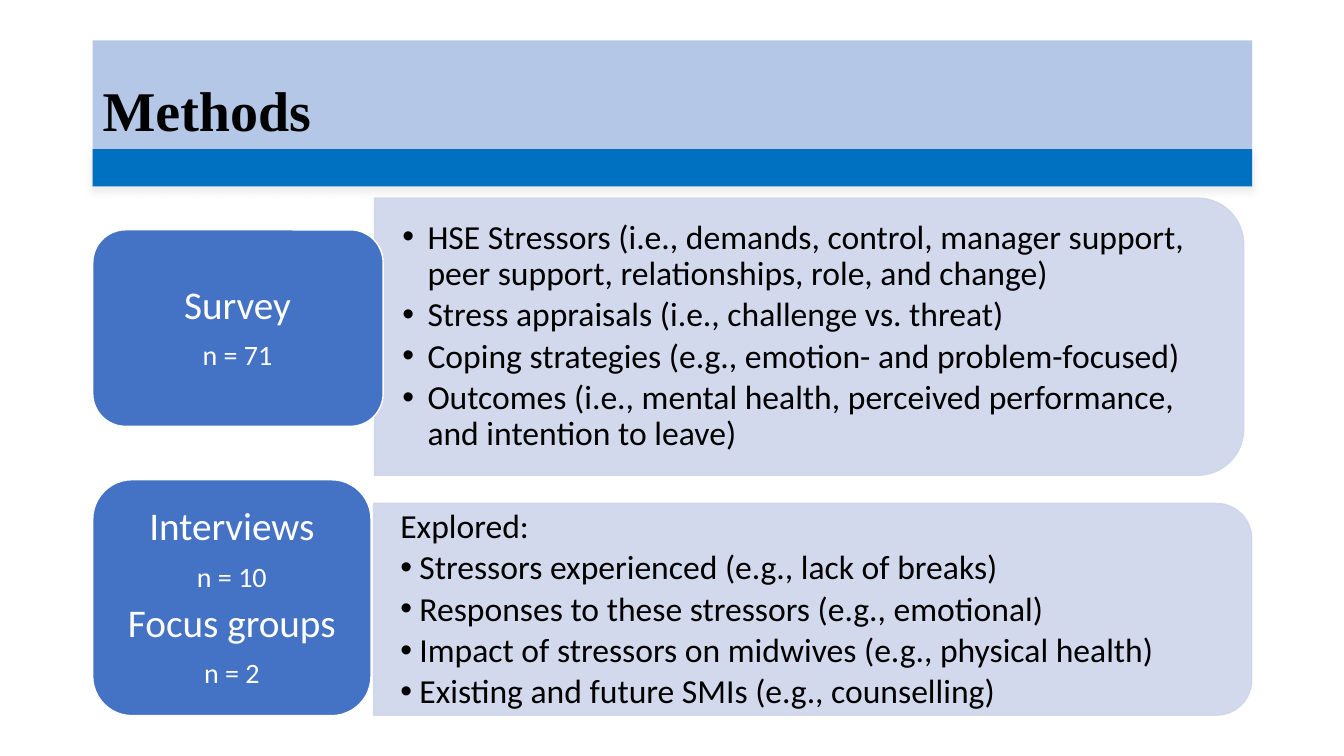
import pptx
import pptx.dml.color
import pptx.enum.shapes
import pptx.enum.text
import pptx.oxml
import pptx.oxml.ns
import pptx.util
from lxml import etree

Inches, Pt = pptx.util.Inches, pptx.util.Pt
RGBColor = pptx.dml.color.RGBColor
SHAPE = pptx.enum.shapes.MSO_SHAPE
ALIGN = pptx.enum.text.PP_ALIGN
qn = pptx.oxml.ns.qn

BLACK = RGBColor(0x00, 0x00, 0x00)
WHITE = RGBColor(0xFF, 0xFF, 0xFF)
BANNER = RGBColor(0xB4, 0xC7, 0xE7)
STRIPE = RGBColor(0x00, 0x70, 0xC0)
PANEL = RGBColor(0xCF, 0xD5, 0xEA)
LABEL = RGBColor(0x44, 0x72, 0xC4)

deck = pptx.Presentation()
deck.slide_width, deck.slide_height = Inches(13.33), Inches(7.5)
page = deck.slides.add_slide(deck.slide_layouts[6])


def add_box(kind, place, fill, line=None):
    box = page.shapes.add_shape(kind, *[Inches(length) for length in place])
    box.shadow.inherit = False
    box.fill.solid()
    box.fill.fore_color.rgb = fill
    if line is None:
        box.line.fill.background()
    else:
        box.line.color.rgb = line
        box.line.width = Pt(1)
    return box


def add_text(place, insets, lines, color, align, space):
    """Lines are (text, size, bullet indent); space is a share of the size."""
    box = page.shapes.add_textbox(*[Inches(length) for length in place])
    frame = box.text_frame
    frame.word_wrap = True
    frame.vertical_anchor = pptx.enum.text.MSO_ANCHOR.MIDDLE
    frame.margin_left = frame.margin_right = Inches(insets[0])
    frame.margin_top = frame.margin_bottom = Inches(insets[1])
    for number, (text, size, indent) in enumerate(lines):
        para = frame.add_paragraph() if number else frame.paragraphs[0]
        para.alignment = align
        para.line_spacing = 0.9
        para.space_after = Pt(round(size * space, 1))
        if indent:
            props = para._p.get_or_add_pPr()
            props.set("marL", str(Inches(indent)))
            props.set("indent", str(-Inches(indent)))
            etree.SubElement(props, qn("a:buFont")).set("typeface", "Arial")
            etree.SubElement(props, qn("a:buChar")).set("char", "•")
        span = para.add_run()
        span.text = text
        span.font.name = "Calibri"
        span.font.size = Pt(size)
        span.font.color.rgb = color


# Title banner
banner = add_box(SHAPE.RECTANGLE, (0.92, 0.4, 11.5, 1.45), BANNER)
banner.text_frame.vertical_anchor = pptx.enum.text.MSO_ANCHOR.MIDDLE
title = banner.text_frame.paragraphs[0]
title.alignment = ALIGN.LEFT
title.line_spacing = 0.9
span = title.add_run()
span.text = "Methods"
span.font.name = "Times New Roman"
span.font.size = Pt(40)
span.font.bold = True
span.font.color.rgb = BLACK

# Each method: panel, panel text, label, label text
methods = [
    {
        "panel": (6.65, -0.97, 2.75, 8.62),
        "panel_text": (3.72, 2.1, 8.48, 2.48),
        "points": [
            ("HSE Stressors (i.e., demands, control, manager support, "
             "peer support, relationships, role, and change)", 24, 0.25),
            ("Stress appraisals (i.e., challenge vs. threat)", 24, 0.25),
            ("Coping strategies (e.g., emotion- and problem-focused)", 24, 0.25),
            ("Outcomes (i.e., mental health, perceived performance, "
             "and intention to leave)", 24, 0.25),
        ],
        "label": (0.92, 2.28, 2.88, 1.95),
        "label_text": (1.01, 2.38, 2.69, 1.76),
        "samples": [("Survey", 28, 0), ("n = 71", 20, 0)],
    },
    {
        "panel": (7.01, 1.69, 2.1, 8.71),
        "panel_text": (3.7, 5.11, 8.61, 1.89),
        "points": [
            ("Explored:", 24, 0),
            ("Stressors experienced (e.g., lack of breaks)", 24, 0.19),
            ("Responses to these stressors (e.g., emotional)", 24, 0.19),
            ("Impact of stressors on midwives (e.g., physical health)", 24, 0.19),
            ("Existing and future SMIs (e.g., counselling)", 24, 0.19),
        ],
        "label": (0.92, 4.76, 2.76, 2.34),
        "label_text": (1.03, 4.88, 2.54, 2.11),
        "samples": [("Interviews", 28, 0), ("n = 10", 20, 0),
                    ("Focus groups", 28, 0), ("n = 2", 20, 0)],
    },
]

for method in methods:
    panel = add_box(SHAPE.ROUND_2_SAME_RECTANGLE, method["panel"], PANEL, PANEL)
    panel.rotation = 90
    for color in panel._element.spPr.iter(qn("a:srgbClr")):
        etree.SubElement(color, qn("a:alpha")).set("val", "90000")
    add_text(method["panel_text"], (0.27, 0.14), method["points"],
             BLACK, ALIGN.LEFT, 0.15)
    add_box(SHAPE.ROUNDED_RECTANGLE, method["label"], LABEL, WHITE)
    add_text(method["label_text"], (0.12, 0.06), method["samples"],
             WHITE, ALIGN.CENTER, 0.35)

# Stripe under the title, with a soft shadow
stripe = add_box(SHAPE.RECTANGLE, (0.92, 1.48, 11.5, 0.37), STRIPE)
effects = stripe._element.spPr.find(qn("a:effectLst"))
shadow = etree.SubElement(effects, qn("a:outerShdw"), blurRad=str(Pt(5)),
                          dist=str(Pt(3)), dir=str(106 * 60000), rotWithShape="0")
tint = etree.SubElement(shadow, qn("a:srgbClr"), val="E7E6E6")
etree.SubElement(tint, qn("a:alpha"), val="75000")

deck.save("out.pptx")
